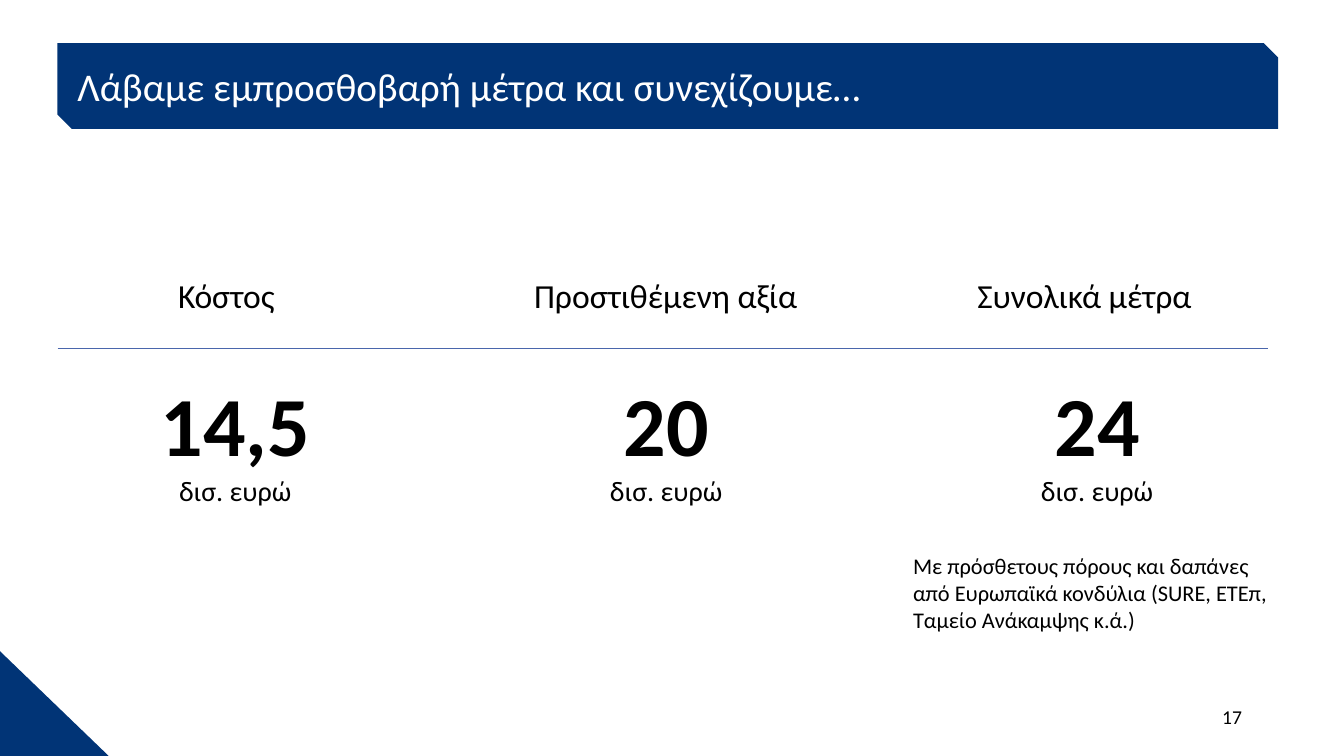
"""Builds the slide on the cost and total value of the measures."""
from lxml.etree import SubElement
from pptx import Presentation
from pptx.dml.color import RGBColor
from pptx.enum.shapes import MSO_CONNECTOR, MSO_SHAPE
from pptx.enum.text import MSO_ANCHOR, MSO_AUTO_SIZE, PP_ALIGN
from pptx.oxml.ns import qn
from pptx.util import Cm, Pt

NAVY, WHITE, BLACK, RULE = "013476", "FFFFFF", "000000", "4A66AC"
BANNER = (1.45, 1.09, 30.76, 2.16)
HEADINGS = [("Κόστος", 4.24, 2.97),
            ("Προστιθέμενη αξία", 13.21, 7.21),
            ("Συνολικά μέτρα", 24.38, 5.97)]
AMOUNTS = ["14,5", "20", "24"]
UNIT = "δισ. ευρώ"
NOTE = ("Με πρόσθετους πόρους και δαπάνες από Ευρωπαϊκά κονδύλια "
        "(SURE, ETEπ, Ταμείο Ανάκαμψης κ.ά.)")


def rgb(value):
    return RGBColor.from_string(value)


def set_attrs(obj, fmt):
    for name, value in fmt.items():
        setattr(obj, name, value)


def write(tf, lines, align=PP_ALIGN.LEFT, color=BLACK):
    for i, (text, size, bold) in enumerate(lines):
        p = tf.paragraphs[0] if i == 0 else tf.add_paragraph()
        p.alignment = align
        r = p.add_run()
        r.text = text
        set_attrs(r.font, {"name": "Calibri", "size": Pt(size), "bold": bold})
        r.font.color.rgb = rgb(color)


def add_text(s, box, lines, align=PP_ALIGN.LEFT, wrap=True):
    tf = s.shapes.add_textbox(*map(Cm, box)).text_frame
    tf.word_wrap = wrap
    write(tf, lines, align)


def add_block(s, kind, box):
    sp = s.shapes.add_shape(kind, *map(Cm, box))
    sp.shadow.inherit = False
    sp.fill.solid()
    sp.fill.fore_color.rgb = rgb(NAVY)
    sp.line.fill.background()


def add_rule(s, left, right, y):
    line = s.shapes.add_connector(MSO_CONNECTOR.STRAIGHT, Cm(left), Cm(y), Cm(right), Cm(y))
    line.line.color.rgb = rgb(RULE)
    line.line.width = Pt(0.5)
    SubElement(line._element.spPr, qn("a:effectLst"))


def add_title(s, text):
    add_block(s, MSO_SHAPE.SNIP_2_DIAG_RECTANGLE, BANNER)
    title = s.shapes.title
    s.shapes._spTree.append(title._element)
    set_attrs(title, dict(zip(("left", "top", "width", "height"), map(Cm, BANNER))))
    tf = title.text_frame
    set_attrs(tf, {"margin_left": Cm(0.5), "margin_right": Cm(0.5),
                   "margin_top": Cm(0.05), "margin_bottom": Cm(0.05),
                   "vertical_anchor": MSO_ANCHOR.MIDDLE, "word_wrap": True,
                   "auto_size": MSO_AUTO_SIZE.NONE})
    write(tf, [(text, 28, False)], color=WHITE)


def main():
    prs = Presentation()
    set_attrs(prs, {"slide_width": Cm(33.87), "slide_height": Cm(19.05)})
    s = prs.slides.add_slide(prs.slide_layouts[5])
    add_block(s, MSO_SHAPE.RIGHT_TRIANGLE, (0, 16.41, 2.74, 2.64))
    add_title(s, "Λάβαμε εμπροσθοβαρή μέτρα και συνεχίζουμε…")
    for heading, left, width in HEADINGS:
        add_text(s, (left, 6.81, width, 1.27), [(heading, 24, False)], wrap=False)
    add_rule(s, 1.45, 31.95, 8.79)
    for i, amount in enumerate(AMOUNTS):
        add_text(s, (3.02 + i * 10.86, 9.27, 5.82, 3.68),
                 [(amount, 60, True), (UNIT, 20, False)], PP_ALIGN.CENTER)
    add_text(s, (22.76, 13.79, 9.91, 2.31), [(NOTE, 16, False)])
    add_text(s, (23.93, 17.65, 7.62, 1.02), [("17", 14, False)], PP_ALIGN.RIGHT)
    prs.save("out.pptx")


if __name__ == "__main__":
    main()
